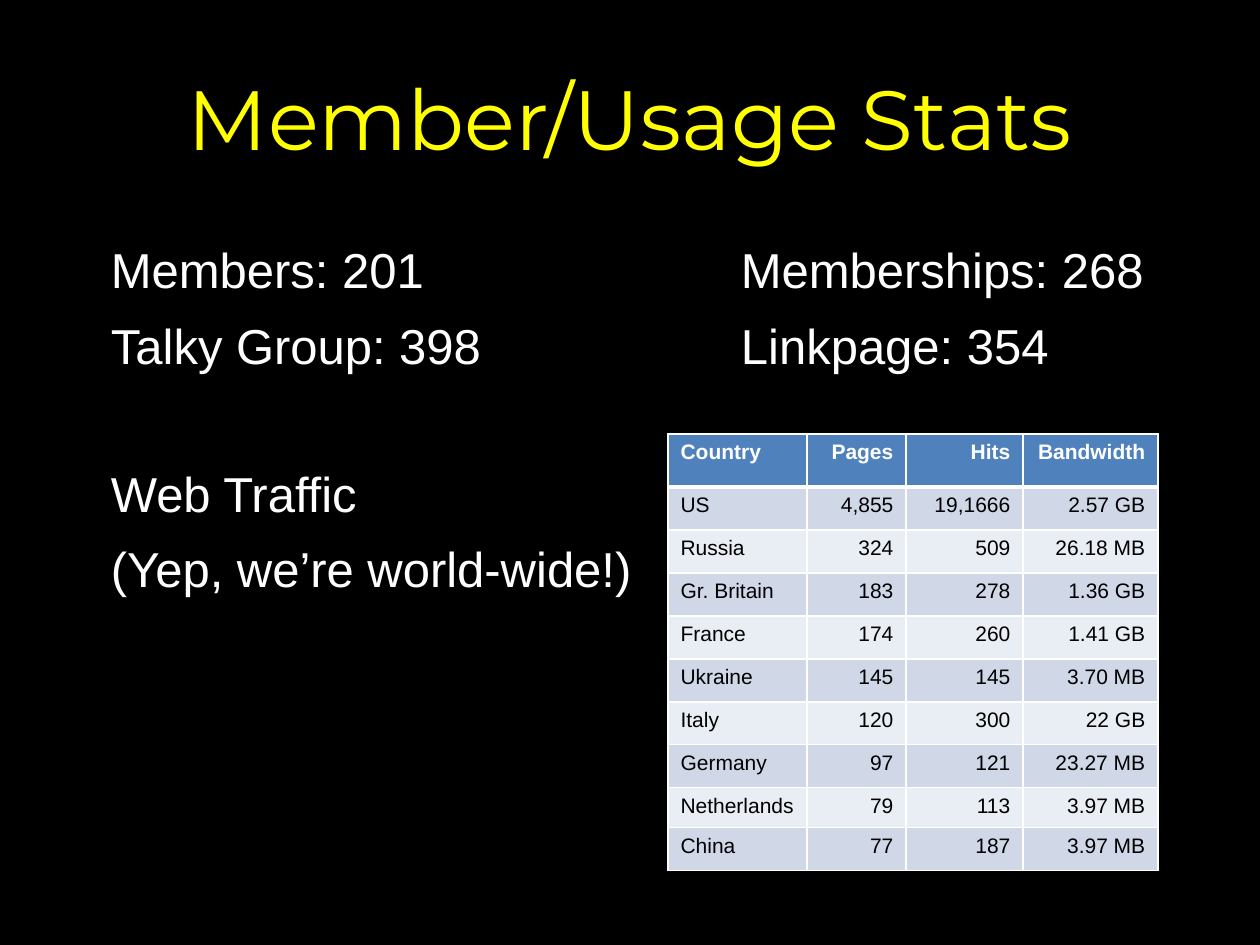
from lxml.etree import SubElement
from pptx import Presentation
from pptx.dml.color import RGBColor
from pptx.enum.text import MSO_ANCHOR, PP_ALIGN
from pptx.oxml.ns import qn
from pptx.util import Emu, Pt

BLACK = RGBColor(0x00, 0x00, 0x00)
WHITE = RGBColor(0xFF, 0xFF, 0xFF)
YELLOW = RGBColor(0xFF, 0xFF, 0x00)
BLUE = RGBColor(0x4F, 0x81, 0xBD)
BANDS = [RGBColor(0xD0, 0xD8, 0xE8), RGBColor(0xE9, 0xED, 0xF4)]

STATS = [
    ["Country", "Pages", "Hits", "Bandwidth"],
    ["US", "4,855", "19,1666", "2.57 GB"],
    ["Russia", "324", "509", "26.18 MB"],
    ["Gr. Britain", "183", "278", "1.36 GB"],
    ["France", "174", "260", "1.41 GB"],
    ["Ukraine", "145", "145", "3.70 MB"],
    ["Italy", "120", "300", "22 GB"],
    ["Germany", "97", "121", "23.27 MB"],
    ["Netherlands", "79", "113", "3.97 MB"],
    ["China", "77", "187", "3.97 MB"],
]
# Each line with the space before it in points
LINES = [
    ("Members: 201\tMemberships: 268", 0),
    ("Talky Group: 398\tLinkpage: 354", 9.4),
    ("Web Traffic", 51),
    ("(Yep, we’re world-wide!)", 9.4),
]


def px(n):
    return Emu(round(n * 914400 / 126))


def write(para, text, size=12, font="Arial", color=WHITE, bold=False,
          align=PP_ALIGN.LEFT, before=0, tab=None):
    para.alignment = align
    para.space_before = Pt(before)
    if tab:
        tabs = SubElement(para._p.get_or_add_pPr(), qn("a:tabLst"))
        SubElement(tabs, qn("a:tab"), pos=str(px(tab)), algn="l")
    run = para.add_run()
    run.text = text
    run.font.size = Pt(size)
    run.font.name = font
    run.font.bold = bold
    run.font.color.rgb = color


class Deck:
    def __init__(self, wide, high):
        self.prs = Presentation()
        self.prs.slide_width, self.prs.slide_height = px(wide), px(high)
        self.slide = None

    def page(self, color):
        self.slide = self.prs.slides.add_slide(self.prs.slide_layouts[6])
        fill = self.slide.background.fill
        fill.solid()
        fill.fore_color.rgb = color

    def text(self, x, y, w, h, lines, left=13, anchor=MSO_ANCHOR.TOP, **style):
        box = self.slide.shapes.add_textbox(px(x), px(y), px(w), px(h))
        frame = box.text_frame
        frame.word_wrap = True
        frame.vertical_anchor = anchor
        frame.margin_left = px(left)
        frame.margin_top = frame.margin_right = frame.margin_bottom = px(13)
        for i, (line, gap) in enumerate(lines):
            para = frame.add_paragraph() if i else frame.paragraphs[0]
            write(para, line, before=gap, **style)

    def edge(self, cell, side, width):
        line = SubElement(cell._tc.get_or_add_tcPr(), qn("a:ln" + side),
                          w=str(Pt(width)))
        fill = SubElement(line, qn("a:solidFill"))
        SubElement(fill, qn("a:srgbClr"), val=str(WHITE))

    def table(self, x, y, cols, rows, data):
        frame = self.slide.shapes.add_table(len(rows), len(cols), px(x), px(y),
                                            px(sum(cols)), px(sum(rows)))
        grid = frame.table
        for col, wide in zip(grid.columns, cols):
            col.width = px(wide)
        for r, (high, items) in enumerate(zip(rows, data)):
            grid.rows[r].height = px(high)
            head = r == 0
            for c, item in enumerate(items):
                cell = grid.cell(r, c)
                # A thick rule parts the header from the body
                thick = {0: "B", 1: "T"}.get(r)
                for side in "LRTB":
                    self.edge(cell, side, 3 if side == thick else 1)
                cell.fill.solid()
                cell.fill.fore_color.rgb = BLUE if head else BANDS[(r - 1) % 2]
                write(cell.text_frame.paragraphs[0], item, bold=head,
                      color=WHITE if head else BLACK,
                      align=PP_ALIGN.RIGHT if c else PP_ALIGN.LEFT)


def main():
    deck = Deck(1260, 945)
    deck.page(BLACK)

    # Title
    deck.text(63, 38, 1134, 157, [("Member/Usage Stats", 0)], size=48,
              font="Montserrat", color=YELLOW, align=PP_ALIGN.CENTER,
              anchor=MSO_ANCHOR.MIDDLE)

    # Member counts in two tabbed columns
    deck.text(63, 227, 1134, 617, LINES, left=48, size=28, tab=630)

    # Web traffic by country
    deck.table(668, 434, [139, 99, 117, 135], [53] + [43] * 7 + [40, 43], STATS)

    deck.prs.save("out.pptx")


if __name__ == "__main__":
    main()
